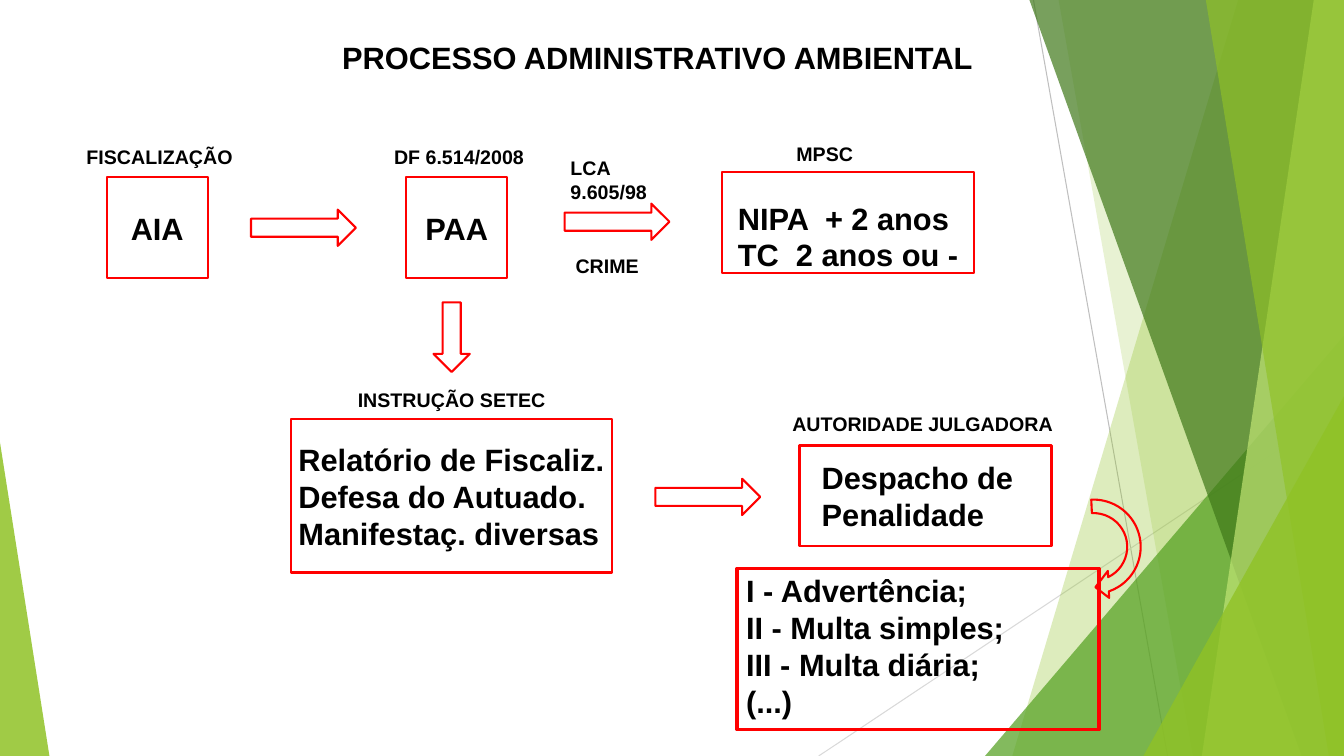
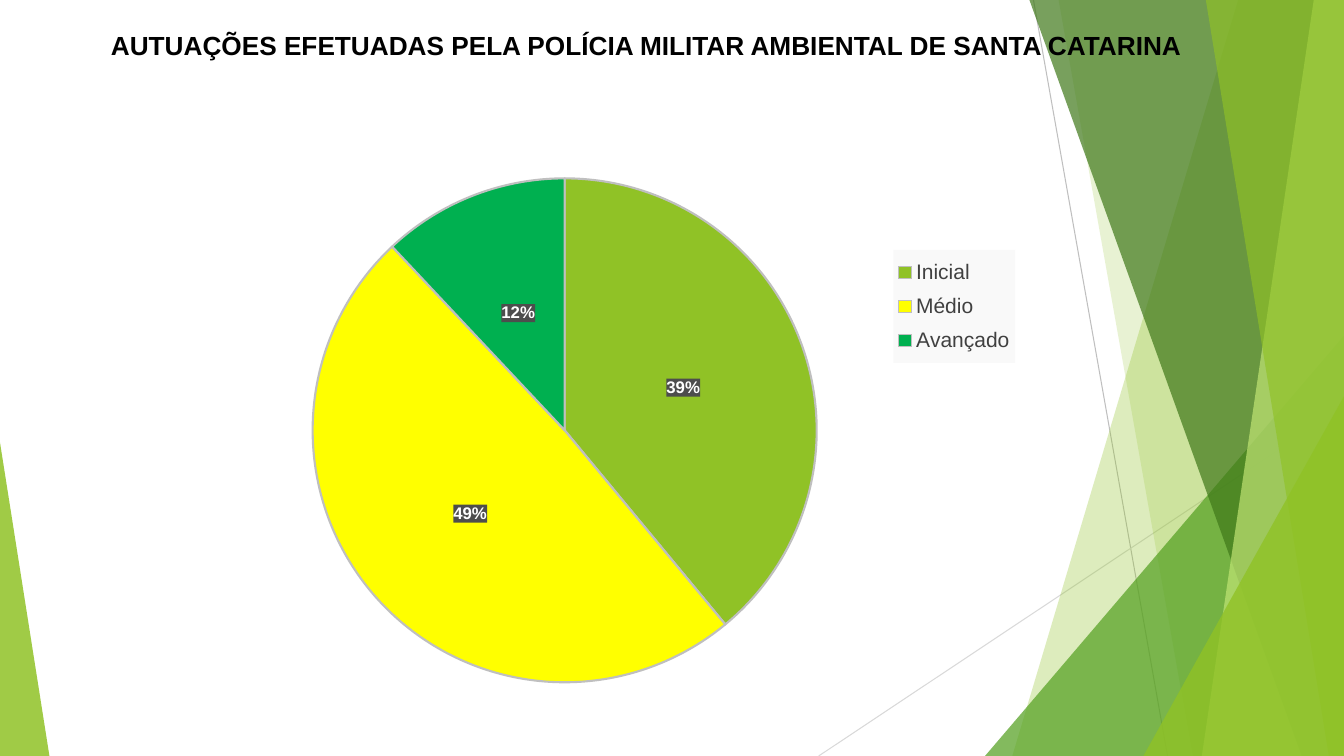
import lxml.etree
import pptx
import pptx.chart.data
import pptx.dml.color
import pptx.enum.chart
import pptx.enum.shapes
import pptx.enum.text
import pptx.oxml.ns
import pptx.util

Inches = pptx.util.Inches
Pt = pptx.util.Pt
SHAPE = pptx.enum.shapes.MSO_SHAPE
ALIGN = pptx.enum.text.PP_ALIGN
ANCHOR = pptx.enum.text.MSO_ANCHOR
qn = pptx.oxml.ns.qn

WIDTH, HEIGHT = 13.33, 7.5
FONT = "Arial"
COLORS = {
    "text": "000000",
    "flow": "FF0000",
    "lime": "90C226",
    "green": "54A021",
    "forest": "3F7819",
    "pale": "C0E474",
    "gray": "BFBFBF",
    "light_gray": "D9D9D9",
    "yellow": "FFFF00",
    "emerald": "00B050",
    "legend_text": "404040",
    "legend_back": "F9F9F9",
    "label_back": "4D4D4D",
    "white": "FFFFFF",
}


def rgb(name):
    return pptx.dml.color.RGBColor.from_string(COLORS[name])


def write(frame, lines, size=22, align=ALIGN.LEFT, anchor=ANCHOR.MIDDLE,
          insets=(0.1, 0.05, 0.1, 0.05), wrap=True):
    """Fill a text frame with one bold paragraph per line; insets run left, top, right, bottom."""
    frame.word_wrap = wrap
    frame.vertical_anchor = anchor
    (frame.margin_left, frame.margin_top,
     frame.margin_right, frame.margin_bottom) = map(Inches, insets)
    for index, line in enumerate(lines):
        paragraph = frame.paragraphs[0] if index == 0 else frame.add_paragraph()
        paragraph.alignment = align
        run = paragraph.add_run()
        run.text = line
        style_font(run.font, size, "text", bold=True)


def style_font(font, size, color, bold=False):
    font.name = FONT
    font.size = Pt(size)
    font.bold = bold
    font.color.rgb = rgb(color)


def add_text(slide, box, lines, **text_format):
    caption = slide.shapes.add_textbox(*map(Inches, box))
    write(caption.text_frame, lines, **text_format)
    if not caption.text_frame.word_wrap:
        caption.text_frame.auto_size = pptx.enum.text.MSO_AUTO_SIZE.SHAPE_TO_FIT_TEXT


def add_title(slide, box, title, size):
    add_text(slide, box, [title], size=size, align=ALIGN.CENTER)


def add_outline(slide, preset, box, weight=1.5, rotation=0):
    outline = slide.shapes.add_shape(preset, *map(Inches, box))
    outline.shadow.inherit = False
    outline.fill.background()
    outline.line.color.rgb = rgb("flow")
    outline.line.width = Pt(weight)
    outline.rotation = rotation
    return outline


def paint_facet(facet, color, opacity):
    facet.shadow.inherit = False
    facet.line.fill.background()
    facet.fill.solid()
    facet.fill.fore_color.rgb = rgb(color)
    tint = facet.element.spPr.find(".//" + qn("a:srgbClr"))
    lxml.etree.SubElement(tint, qn("a:alpha")).set("val", str(opacity * 1000))


def add_ray(slide, start, end, color):
    ray = slide.shapes.add_connector(
        pptx.enum.shapes.MSO_CONNECTOR.STRAIGHT, *map(Inches, start + end))
    ray.line.color.rgb = rgb(color)
    ray.line.width = Pt(0.75)
    lxml.etree.SubElement(ray.element.spPr, qn("a:effectLst"))


def add_band(slide, top_x, bottom_x, color, opacity):
    """Facet from a slanted left edge to the right edge of the slide."""
    corners = [(top_x, 0), (WIDTH, 0), (WIDTH, HEIGHT), (bottom_x, HEIGHT)]
    points = [(Inches(x), Inches(y)) for x, y in corners]
    builder = slide.shapes.build_freeform(*points[0])
    builder.add_line_segments(points[1:], close=True)
    paint_facet(builder.convert_to_shape(), color, opacity)


def add_corner(slide, left, top, width, apex, color, opacity):
    """Triangle standing on the bottom edge of the slide."""
    corner = slide.shapes.add_shape(
        SHAPE.ISOSCELES_TRIANGLE, *map(Inches, (left, top, width, HEIGHT - top)))
    corner.adjustments[0] = apex
    paint_facet(corner, color, opacity)


def add_backdrop(slide):
    add_ray(slide, (10.25, 0), (11.58, HEIGHT), "gray")
    add_ray(slide, (WIDTH, 4.03), (8.12, HEIGHT), "light_gray")
    add_band(slide, 12.28, 10.04, "lime", 30)
    add_band(slide, 10.5, 11.83, "lime", 20)
    add_corner(slide, 9.77, 3.33, 3.56, 1, "green", 72)
    add_band(slide, 10.21, 12.91, "forest", 70)
    add_band(slide, 13.03, 11.92, "pale", 70)
    add_band(slide, 11.96, 13.18, "lime", 65)
    add_corner(slide, 11.34, 3.93, 1.99, 1, "lime", 80)
    add_corner(slide, 0, 4.39, 0.49, 0, "lime", 85)


def add_step(slide, box, lines, weight=1.5, **text_format):
    step = add_outline(slide, SHAPE.RECTANGLE, box, weight)
    write(step.text_frame, lines, **text_format)


def add_process(slide):
    captions = [
        ((0.76, 1.39, 1.66, 0.34), ["FISCALIZAÇÃO"]),
        ((3.81, 1.39, 1.5, 0.34), ["DF 6.514/2008"]),
        ((5.56, 1.5, 0.96, 0.57), ["LCA", "9.605/98"]),
        ((5.61, 2.47, 0.83, 0.34), ["CRIME"]),
        ((7.8, 1.36, 0.78, 0.34), ["MPSC"]),
        ((3.45, 3.8, 2.08, 0.34), ["INSTRUÇÃO SETEC"]),
        ((7.76, 4.04, 2.81, 0.34), ["AUTORIDADE JULGADORA"]),
    ]
    for box, lines in captions:
        add_text(slide, box, lines, size=14, anchor=ANCHOR.TOP, wrap=False)

    for left, code in ((1.06, "AIA"), (4.03, "PAA")):
        add_step(slide, (left, 1.76, 1, 1), [code], align=ALIGN.CENTER)
    add_step(slide, (7.16, 1.71, 2.5, 1), ["NIPA  + 2 anos", "TC  2 anos ou -"],
             anchor=ANCHOR.BOTTOM, insets=(0.16, 0, 0, 0))
    add_step(slide, (2.89, 4.16, 3.18, 1.52),
             ["Relatório de Fiscaliz.", "Defesa do Autuado.", "Manifestaç. diversas"],
             insets=(0.07, 0, 0, 0))
    add_step(slide, (7.93, 4.42, 2.5, 1), ["Despacho de", "Penalidade"],
             insets=(0.22, 0, 0, 0))
    add_step(slide, (7.31, 5.64, 3.59, 1.6),
             ["I - Advertência;", "II - Multa simples;", "III - Multa diária;", "(...)"],
             weight=2.25, anchor=ANCHOR.TOP, insets=(0.09, 0.03, 0, 0))

    for left, top in ((2.49, 2.08), (5.6, 2.02), (6.5, 4.75)):
        add_outline(slide, SHAPE.RIGHT_ARROW, (left, top, 1.04, 0.36))
    add_outline(slide, SHAPE.DOWN_ARROW, (4.3, 3, 0.36, 0.69))
    add_outline(slide, SHAPE.CIRCULAR_ARROW, (10.31, 4.89, 1.07, 1.07), rotation=87.3)


def chart_layout(frame, area, inner=False):
    """Layout element that puts a chart part at area inside frame, both in slide inches."""
    left, top, width, height = frame
    shares = {
        "x": (area[0] - left) / width,
        "y": (area[1] - top) / height,
        "w": area[2] / width,
        "h": area[3] / height,
    }
    layout = lxml.etree.Element(qn("c:layout"))
    manual = lxml.etree.SubElement(layout, qn("c:manualLayout"))
    settings = [("layoutTarget", "inner")] if inner else []
    settings += [("xMode", "edge"), ("yMode", "edge")]
    settings += [(key, f"{share:.4f}") for key, share in shares.items()]
    for tag, setting in settings:
        lxml.etree.SubElement(manual, qn("c:" + tag)).set("val", setting)
    return layout


def place_part(part, layout, index):
    for old in part.findall(qn("c:layout")):
        part.remove(old)
    part.insert(index, layout)


def fill_behind(part, color):
    """Give the legend or the data labels a solid background."""
    back = lxml.etree.Element(qn("c:spPr"))
    fill = lxml.etree.SubElement(back, qn("a:solidFill"))
    lxml.etree.SubElement(fill, qn("a:srgbClr")).set("val", COLORS[color])
    part.find(qn("c:txPr")).addprevious(back)


def add_stage_chart(slide, frame):
    stages = [("Inicial", 39, "lime"), ("Médio", 49, "yellow"), ("Avançado", 12, "emerald")]
    data = pptx.chart.data.CategoryChartData()
    data.categories = [name for name, _, _ in stages]
    data.add_series("Series 1", [share for _, share, _ in stages])
    chart = slide.shapes.add_chart(
        pptx.enum.chart.XL_CHART_TYPE.PIE, *map(Inches, frame), data).chart
    chart.has_title = False
    chart.font.name = "Cabin"
    chart.font.size = Pt(10)
    chart.font.color.rgb = rgb("text")

    plot = chart.plots[0]
    plot.vary_by_categories = True
    for index, (_, _, color) in enumerate(stages):
        slice_format = plot.series[0].points[index].format
        slice_format.fill.solid()
        slice_format.fill.fore_color.rgb = rgb(color)
        slice_format.line.color.rgb = rgb("gray")
        slice_format.line.width = Pt(1.5)

    plot.has_data_labels = True
    labels = plot.data_labels
    labels.show_percentage = True
    labels.show_value = False
    labels.number_format = "0%"
    labels.number_format_is_linked = False
    labels.position = pptx.enum.chart.XL_LABEL_POSITION.CENTER
    style_font(labels.font, 12, "white", bold=True)

    chart.has_legend = True
    legend = chart.legend
    legend.position = pptx.enum.chart.XL_LEGEND_POSITION.RIGHT
    legend.include_in_layout = False
    style_font(legend.font, 15, "legend_text")

    root = chart.element
    legend_part = root.find(".//" + qn("c:legend"))
    fill_behind(legend_part, "legend_back")
    fill_behind(root.find(".//" + qn("c:dLbls")), "label_back")
    place_part(root.find(".//" + qn("c:plotArea")),
               chart_layout(frame, (3.1, 1.77, 5, 5), inner=True), 0)
    place_part(legend_part, chart_layout(frame, (8.86, 2.48, 1.21, 1.12)),
               len(legend_part.findall(qn("c:legendPos"))))


def main():
    deck = pptx.Presentation()
    deck.slide_width, deck.slide_height = Inches(WIDTH), Inches(HEIGHT)
    process, fines = (deck.slides.add_slide(deck.slide_layouts[6]) for _ in range(2))
    for slide in (process, fines):
        add_backdrop(slide)

    add_title(process, (1.03, 0.33, 10.98, 0.48), "PROCESSO ADMINISTRATIVO AMBIENTAL", 22)
    add_process(process)

    add_title(fines, (0.92, 0.21, 10.98, 0.48),
              "AUTUAÇÕES EFETUADAS PELA POLÍCIA MILITAR AMBIENTAL DE SANTA CATARINA", 18.7)
    add_stage_chart(fines, (1.08, 1.63, 10.34, 5.28))
    deck.save("out.pptx")


if __name__ == "__main__":
    main()
